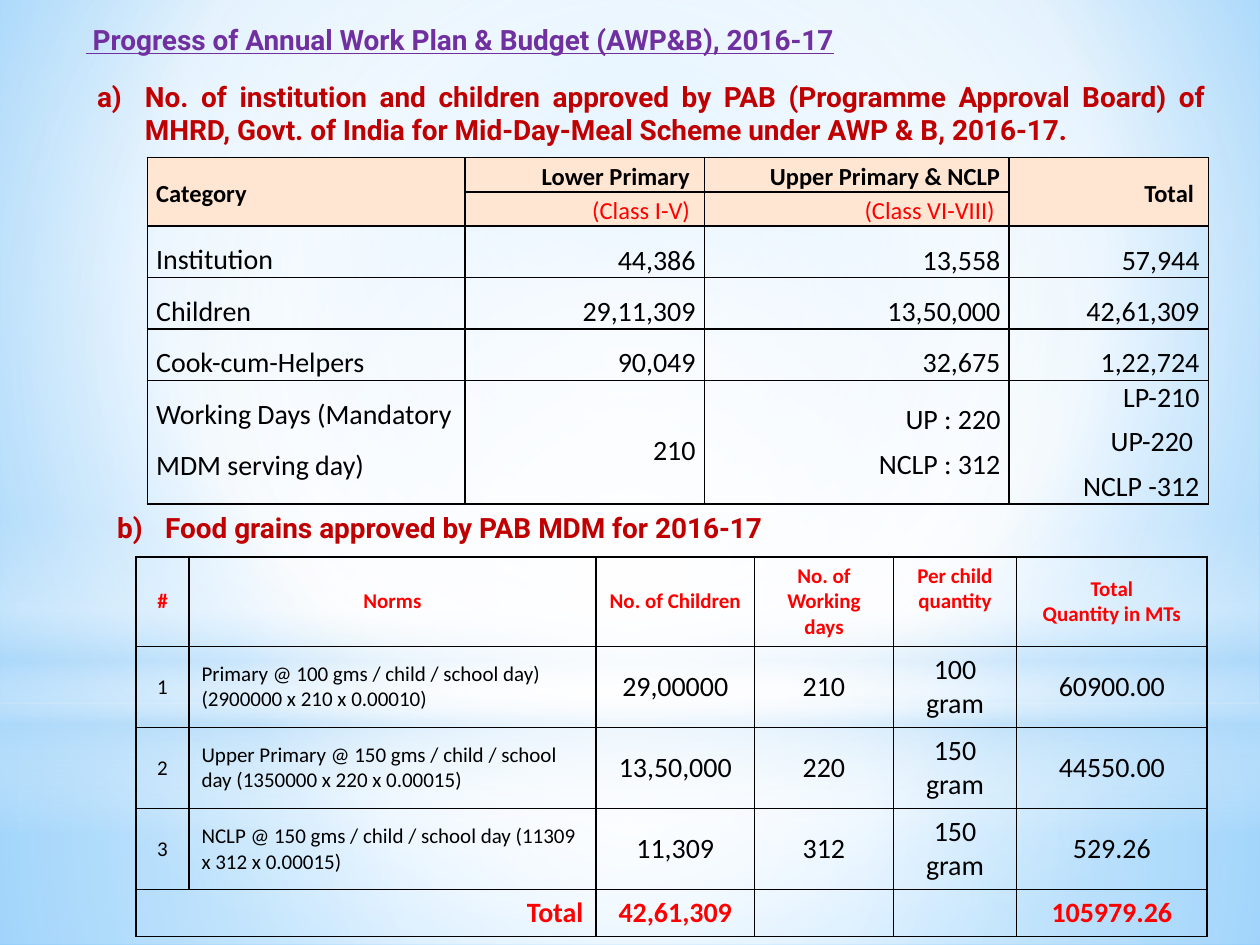
from lxml.etree import SubElement
from pptx import Presentation
from pptx.dml.color import RGBColor
from pptx.enum.shapes import MSO_SHAPE as SHAPE
from pptx.enum.text import MSO_ANCHOR as ANCHOR, MSO_AUTO_SIZE as AUTO, PP_ALIGN as ALIGN
from pptx.oxml import parse_xml
from pptx.oxml.ns import nsdecls, qn
from pptx.util import Inches, Pt

C = {"title": "7030A0", "heading": "C00000", "text": "000000", "accent": "FF0000",
     "header": "FFE6D3", "white": "FFFFFF", "haze": "B4DCFA", "sky": "9ED5FF", "deep": "5BB9FF"}

TITLE = " Progress of Annual Work Plan & Budget (AWP&B), 2016-17"
HEADINGS = [
    ("No. of institution and children approved by PAB (Programme Approval Board) of MHRD, "
     "Govt. of India for Mid-Day-Meal Scheme under AWP & B, 2016-17.",
     (0.67, 0.58, 9, 0.64), ALIGN.JUSTIFY),
    ("Food grains approved by PAB MDM for 2016-17", (0.83, 4, 7.75, 0.37), ALIGN.LEFT),
]

APPROVED = [
    ["Category", "Lower Primary ", "Upper Primary & NCLP", "Total "],
    ["", "(Class I-V) ", "(Class VI-VIII) ", ""],
    ["Institution", "44,386", "13,558", "57,944"],
    ["Children", "29,11,309", "13,50,000", "42,61,309"],
    ["Cook-cum-Helpers", "90,049", "32,675", "1,22,724"],
    ["Working Days (Mandatory MDM serving day)", "210", "UP : 220\nNCLP : 312",
     "LP-210\nUP-220 \nNCLP -312"],
]
APPROVED_COLS = [2.52, 1.9, 2.42, 1.58]
APPROVED_ROWS = [0.27, 0.27, 0.4, 0.4, 0.4, 0.97]

GRAINS = [
    ["#", "Norms", "No. of Children", "No. of Working days", "Per child quantity",
     "Total\nQuantity in MTs"],
    ["1", "Primary @ 100 gms / child / school day) (2900000 x 210 x 0.00010)",
     "29,00000", "210", "100 gram", "60900.00"],
    ["2", "Upper Primary @ 150 gms / child / school day (1350000 x 220 x 0.00015)",
     "13,50,000", "220", "150 gram", "44550.00"],
    ["3", "NCLP @ 150 gms / child / school day (11309 x 312 x 0.00015)",
     "11,309", "312", "150 gram", "529.26"],
    ["Total", "", "42,61,309", "", "", "105979.26"],
]
GRAINS_COLS = [0.42, 3.23, 1.26, 1.1, 0.98, 1.51]
GRAINS_ROWS = [0.7, 0.63, 0.63, 0.63, 0.37]

CENTRE = (50, 50, 50, 50)
BACKGROUND = ([(0, "sky", 100), (60, "white", 100), (100, "deep", 100)], (20, 10, 20, 60))
LAYERS = [
    (SHAPE.RECTANGLE, (0, 5.58, 10, 1.92),
     [(0, "white", 91), (37, "white", 76), (100, "haze", 79)], CENTRE),
    (SHAPE.RECTANGLE, (0, 0, 10, 5.58),
     [(0, "white", 89), (48, "white", 62), (100, "haze", 79)], CENTRE),
    (SHAPE.RECTANGLE, (0, 4.12, 10, 2.5),
     [(0, "white", 0), (29, "white", 30), (45, "haze", 40), (55, "white", 26),
      (65, "haze", 60), (100, "white", 0)], None),
    (SHAPE.OVAL, (0, 1.75, 10, 5.58), [(0, "white", 100), (56, "white", 0)], CENTRE),
]


def set_gradient(fill, holder, stops, focus):
    fill.gradient()
    old = next(holder.iter(qn("a:gradFill")))
    gs = "".join(f'<a:gs pos="{pos * 1000}"><a:srgbClr val="{C[color]}">'
                 f'<a:alpha val="{alpha * 1000}"/></a:srgbClr></a:gs>'
                 for pos, color, alpha in stops)
    if focus:
        l, t, r, b = (v * 1000 for v in focus)
        shade = (f'<a:path path="circle"><a:fillToRect l="{l}" t="{t}" r="{r}" b="{b}"/>'
                 '</a:path>')
    else:
        shade = '<a:lin ang="5400000" scaled="0"/>'
    old.getparent().replace(old, parse_xml(
        f'<a:gradFill {nsdecls("a")} rotWithShape="1"><a:gsLst>{gs}</a:gsLst>{shade}</a:gradFill>'))


def add_run(p, text, font, size, color, bold):
    r = p.add_run()
    r.text = text
    r.font.name, r.font.size, r.font.bold = font, Pt(size), bold
    r.font.color.rgb = RGBColor.from_string(C[color])
    return r


def place(sp, box, align):
    sp.left, sp.top, sp.width, sp.height = map(Inches, box)
    tf = sp.text_frame
    tf.word_wrap, tf.auto_size, tf.vertical_anchor = True, AUTO.NONE, ANCHOR.TOP
    p = tf.paragraphs[0]
    p.alignment, p.space_before = align, Pt(0)
    return p


def add_table(s, left, top, cols, rows):
    frame = s.shapes.add_table(len(rows), len(cols), Inches(left), Inches(top),
                               Inches(sum(cols)), Inches(sum(rows)))
    table = frame.table
    table.first_row = table.horz_banding = False
    for col, width in zip(table.columns, cols):
        col.width = Inches(width)
    for row, height in zip(table.rows, rows):
        row.height = Inches(height)
    return table


def fill_cell(cell, text, align, size, color, bold, fill=None, spacing=1.0, gap=0,
              anchor=ANCHOR.MIDDLE):
    tcPr = cell._tc.get_or_add_tcPr()
    for side in ("lnL", "lnR", "lnT", "lnB"):
        tcPr.append(parse_xml(f'<a:{side} {nsdecls("a")} w="12700"><a:solidFill>'
                              f'<a:srgbClr val="{C["text"]}"/></a:solidFill></a:{side}>'))
    if fill:
        cell.fill.solid()
        cell.fill.fore_color.rgb = RGBColor.from_string(C[fill])
    else:
        cell.fill.background()
    cell.vertical_anchor = anchor
    tf = cell.text_frame
    for i, line in enumerate(text.split("\n")):
        p = tf.add_paragraph() if i else tf.paragraphs[0]
        p.alignment, p.line_spacing = align, spacing
        p.space_before, p.space_after = Pt(gap if i else 0), Pt(gap)
        if line:
            add_run(p, line, "Calibri", size, color, bold)
        else:
            SubElement(p._p, qn("a:endParaRPr"), sz=str(size * 100))


def add_approved(s):
    table = add_table(s, 1.17, 1.25, APPROVED_COLS, APPROVED_ROWS)
    for i, row in enumerate(APPROVED):
        for j, text in enumerate(row):
            cell = table.cell(i, j)
            cell.margin_left = cell.margin_right = Inches(0.07)
            cell.margin_top = cell.margin_bottom = 0
            head = i < 2
            spacing = 1.15 if head else 1.0 if "\n" in text else 1.5
            fill_cell(cell, text, ALIGN.RIGHT if j else ALIGN.LEFT, 14 if head else 16,
                      "accent" if i == 1 else "text", i == 0, "header" if head else None,
                      spacing, 3, ANCHOR.MIDDLE if head or j else ANCHOR.TOP)
    for j in (0, 3):
        table.cell(0, j).merge(table.cell(1, j))


def add_grains(s):
    table = add_table(s, 1.08, 4.42, GRAINS_COLS, GRAINS_ROWS)
    last = len(GRAINS) - 1
    for i, row in enumerate(GRAINS):
        for j, text in enumerate(row):
            strong = i in (0, last)
            align = ALIGN.CENTER
            if j < 2 and i == last:
                align = ALIGN.RIGHT
            elif j == 1 and i:
                align = ALIGN.LEFT
            small = i == 0 or (j < 2 and i < last)
            fill_cell(table.cell(i, j), text, align, 12 if small else 16,
                      "accent" if strong else "text", strong,
                      anchor=ANCHOR.TOP if (i, j) == (0, 4) else ANCHOR.MIDDLE)
    table.cell(last, 0).merge(table.cell(last, 1))


def main():
    prs = Presentation()
    prs.slide_width, prs.slide_height = Inches(10), Inches(7.5)
    s = prs.slides.add_slide(prs.slide_layouts[3])
    set_gradient(s.background.fill, s._element, *BACKGROUND)

    for i, (kind, box, stops, focus) in enumerate(LAYERS):
        sp = s.shapes.add_shape(kind, *map(Inches, box))
        sp.shadow.inherit = False
        sp.line.fill.background()
        set_gradient(sp.fill, sp._element, stops, focus)
        sp._element.getparent().insert(2 + i, sp._element)

    p = place(s.shapes.title, (0.58, 0.13, 8.83, 0.37), ALIGN.LEFT)
    add_run(p, TITLE, "Roboto", 16, "title", True).font.underline = True

    for n, (text, box, align) in enumerate(HEADINGS, 1):
        p = place(s.placeholders[n], box, align)
        pPr = p._p.get_or_add_pPr()
        pPr.set("marL", str(Inches(0.38)))
        pPr.set("indent", str(-Inches(0.38)))
        SubElement(pPr, qn("a:buFontTx"))
        SubElement(pPr, qn("a:buAutoNum"), type="alphaLcParenR", startAt=str(n))
        add_run(p, text, "Roboto", 16, "heading", True)

    add_approved(s)
    add_grains(s)
    prs.save("out.pptx")


if __name__ == "__main__":
    main()
